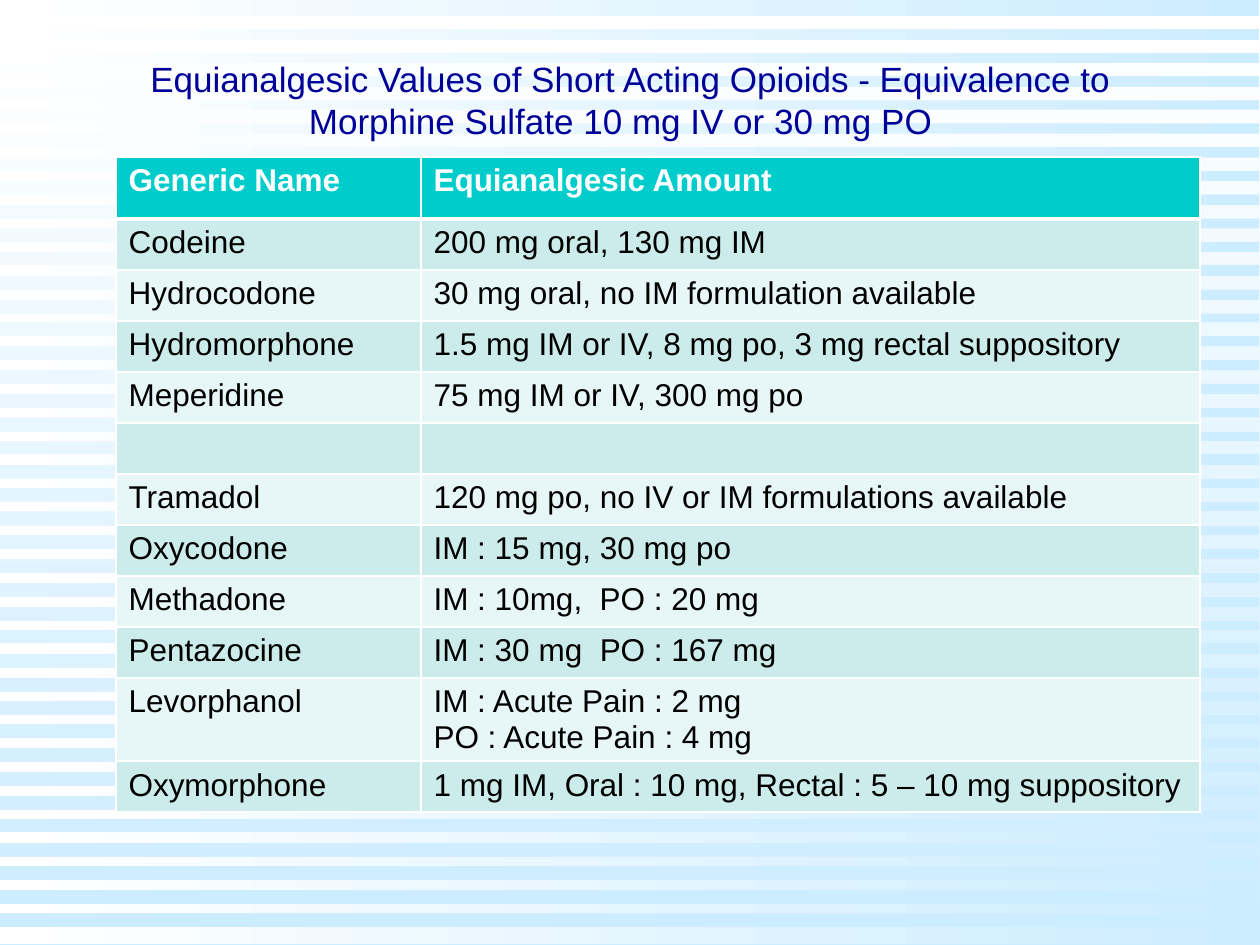
from dataclasses import dataclass

from lxml import etree
from pptx import Presentation
from pptx.dml.color import RGBColor
from pptx.enum.shapes import MSO_SHAPE
from pptx.enum.text import MSO_ANCHOR, PP_ALIGN
from pptx.oxml.ns import qn
from pptx.util import Emu, Pt

RECT = MSO_SHAPE.RECTANGLE
MIDDLE = MSO_ANCHOR.MIDDLE
CENTER = PP_ALIGN.CENTER

SCALE = 914400 / 126
WIDE, HIGH = 1260, 945
EDGE = 1259
FONT = "Arial"
WHITE, SKY, NAVY, BLACK = "FFFFFF", "CCECFF", "000099", "000000"
TEAL, BANDS = "00CCCC", ("CCECEC", "E7F6F6")
DOWN, ACROSS = 270, 0
TITLE = (
    "Equianalgesic Values of Short Acting Opioids - Equivalence to "
    "Morphine Sulfate 10 mg IV or 30 mg PO  "
)


@dataclass
class Drug:
    name: str
    dose: str


HEAD = Drug("Generic Name", "Equianalgesic Amount")
DRUGS = [
    Drug("Codeine", "200 mg oral, 130 mg IM"),
    Drug("Hydrocodone", "30 mg oral, no IM formulation available"),
    Drug("Hydromorphone", "1.5 mg IM or IV, 8 mg po, 3 mg rectal suppository"),
    Drug("Meperidine", "75 mg IM or IV, 300 mg po"),
    Drug("", ""),
    Drug("Tramadol", "120 mg po, no IV or IM formulations available"),
    Drug("Oxycodone", "IM : 15 mg, 30 mg po"),
    Drug("Methadone", "IM : 10mg,  PO : 20 mg"),
    Drug("Pentazocine", "IM : 30 mg  PO : 167 mg"),
    Drug("Levorphanol", "IM : Acute Pain : 2 mg\nPO : Acute Pain : 4 mg"),
    Drug("Oxymorphone", "1 mg IM, Oral : 10 mg, Rectal : 5 – 10 mg suppository"),
]


def px(size: int) -> Emu:
    return Emu(round(size * SCALE))


def color(code: str) -> RGBColor:
    return RGBColor.from_string(code)


def fade(fill, angle: int) -> None:
    fill.gradient()
    fill.gradient_angle = angle
    for stop, place, code in zip(fill.gradient_stops, (0, 1), (WHITE, SKY)):
        stop.position = place
        stop.color.rgb = color(code)


def finish(shape, angle: int) -> None:
    fade(shape.fill, angle)
    shape.line.fill.background()
    shape.shadow.inherit = False


def style(frame, size: int, code: str, bold: bool = False) -> None:
    for para in frame.paragraphs:
        for run in para.runs:
            run.font.name = FONT
            run.font.size = Pt(size)
            run.font.bold = bold
            run.font.color.rgb = color(code)


def stripe(shapes) -> None:
    pitch, first, thick, count = HIGH / 40, 16, 13, 39
    path = shapes.build_freeform(0, first, SCALE)
    for i in range(count):
        top = round(first + i * pitch)
        low = top + thick
        if i:
            path.move_to(0, top)
        path.add_line_segments([(EDGE, top), (EDGE, low), (0, low)], close=True)
    finish(path.convert_to_shape(), DOWN)


def border(cell, top: int, low: int) -> None:
    props = cell._tc.get_or_add_tcPr()
    for tag, width in (("lnL", 1), ("lnR", 1), ("lnT", top), ("lnB", low)):
        line = etree.SubElement(props, qn(f"a:{tag}"), w=str(Pt(width)))
        solid = etree.SubElement(line, qn("a:solidFill"))
        etree.SubElement(solid, qn("a:srgbClr"), val=WHITE)


def chart(shapes) -> None:
    rows = [HEAD, *DRUGS]
    tall = [62] + [51] * len(DRUGS)
    wide = [305, 779]
    frame = shapes.add_table(
        len(rows), 2, px(116), px(157), px(sum(wide)), px(sum(tall))
    )
    table = frame.table
    for col, size in zip(table.columns, wide):
        col.width = px(size)
    for i, drug in enumerate(rows):
        table.rows[i].height = px(tall[i])
        head = i == 0
        for j, text in enumerate((drug.name, drug.dose)):
            cell = table.cell(i, j)
            border(cell, 3 if i == 1 else 1, 3 if head else 1)
            cell.fill.solid()
            cell.fill.fore_color.rgb = color(TEAL if head else BANDS[(i - 1) % 2])
            cell.text_frame.text = text
            style(cell.text_frame, 18, WHITE if head else BLACK, head)


def main() -> None:
    deck = Presentation()
    deck.slide_width, deck.slide_height = px(WIDE), px(HIGH)
    slide = deck.slides.add_slide(deck.slide_layouts[5])
    fade(slide.background.fill, DOWN)
    shapes = slide.shapes
    title = shapes.title
    finish(shapes.add_shape(RECT, 0, 0, px(EDGE), px(HIGH - 1)), ACROSS)
    stripe(shapes)
    shapes._spTree.append(title._element)
    title.left, title.top = px(95), px(21)
    title.width, title.height = px(1071), px(158)
    frame = title.text_frame
    frame.text = TITLE
    frame.word_wrap = True
    frame.vertical_anchor = MIDDLE
    frame.paragraphs[0].alignment = CENTER
    style(frame, 20, NAVY)
    chart(shapes)
    deck.save("out.pptx")


if __name__ == "__main__":
    main()
